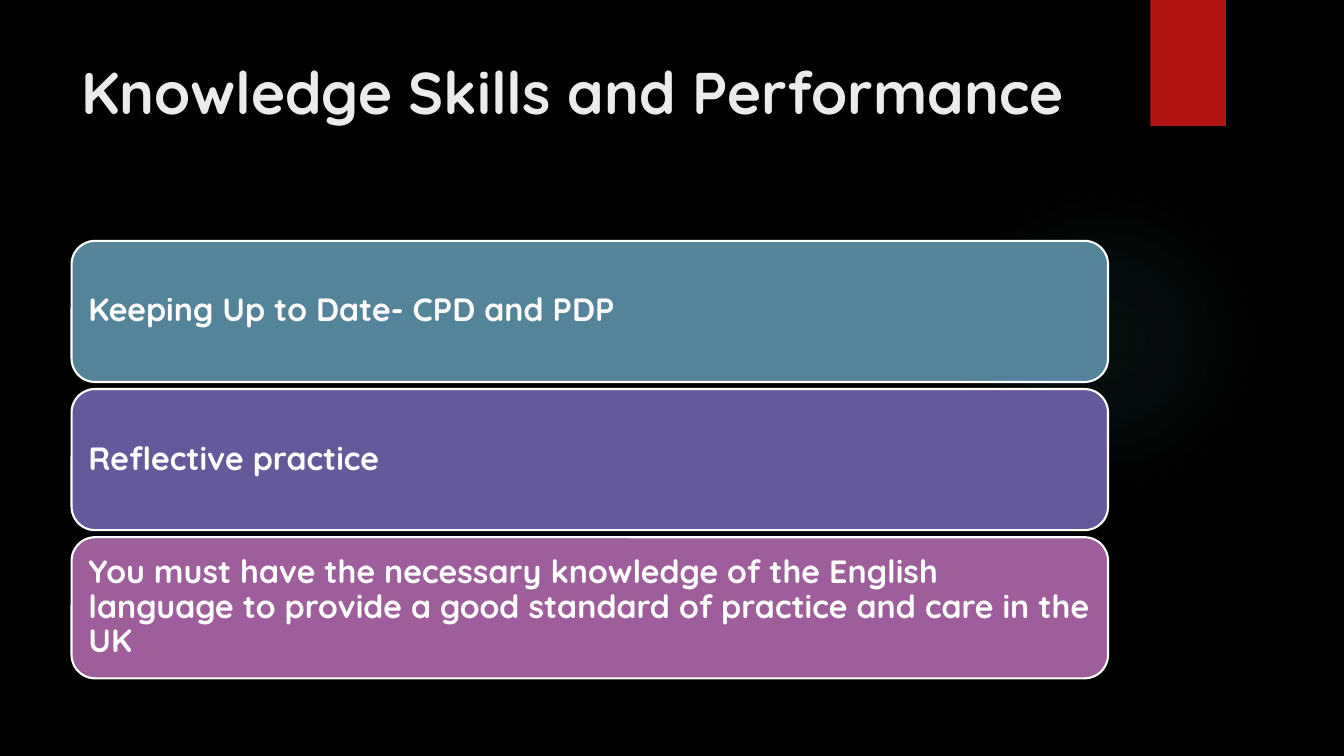
"""Build the Knowledge Skills and Performance slide."""
from dataclasses import dataclass

import lxml.etree
import pptx
import pptx.dml.color
import pptx.enum.shapes
import pptx.enum.text
import pptx.oxml.ns
import pptx.util

Inches = pptx.util.Inches
qn = pptx.oxml.ns.qn
Preset = pptx.enum.shapes.MSO_SHAPE
Anchor = pptx.enum.text.MSO_ANCHOR


@dataclass(frozen=True)
class Theme:
    """Colours, font and type sizes."""
    background: str = "000000"
    ribbon: str = "B01513"
    glow: str = "50B9C1"
    title: str = "EBEBEB"
    white: str = "FFFFFF"
    font: str = "Quicksand"
    title_size: float = 42
    bar_size: float = 23


@dataclass(frozen=True)
class Bar:
    """A rounded bar with its message."""
    text: str
    fill: str


THEME = Theme()
BARS = [
    Bar("Keeping Up to Date- CPD and PDP", "54849A"),
    Bar("Reflective practice", "65599C"),
    Bar("You must have the necessary knowledge of the English language to "
        "provide a good standard of practice and care in the UK", "9E5E9B"),
]
LEFT, BAR_TOP, BAR_WIDTH, BAR_HEIGHT, BAR_PITCH = 0.71, 2.39, 10.28, 1.4, 1.47


def rgb(value: str) -> pptx.dml.color.RGBColor:
    """Turn a hexadecimal string into a colour."""
    return pptx.dml.color.RGBColor.from_string(value)


def add_colour(parent, value: str, alpha: int) -> None:
    """Append a colour with an opacity in percent."""
    colour = lxml.etree.SubElement(parent, qn("a:srgbClr"), val=value)
    lxml.etree.SubElement(colour, qn("a:alpha"), val=str(alpha * 1000))


def write_text(shape, text: str, *, size: float, colour: str, anchor: Anchor,
               margins: tuple[float, float], line_spacing: float = 1.0) -> None:
    """Write one bold, left-aligned paragraph into a shape."""
    frame = shape.text_frame
    frame.word_wrap = True
    frame.vertical_anchor = anchor
    frame.margin_left = frame.margin_right = Inches(margins[0])
    frame.margin_top = frame.margin_bottom = Inches(margins[1])
    paragraph = frame.paragraphs[0]
    paragraph.alignment = pptx.enum.text.PP_ALIGN.LEFT
    paragraph.line_spacing = line_spacing
    run = paragraph.add_run()
    run.text = text
    run.font.name = THEME.font
    run.font.size = pptx.util.Pt(size)
    run.font.bold = True
    run.font.color.rgb = rgb(colour)


def add_block(slide, preset: Preset, left: float, top: float, width: float,
              height: float, fill: str, line: str | None = None):
    """Add a filled preset shape without a shadow."""
    shape = slide.shapes.add_shape(
        preset, Inches(left), Inches(top), Inches(width), Inches(height))
    shape.fill.solid()
    shape.fill.fore_color.rgb = rgb(fill)
    if line:
        shape.line.color.rgb = rgb(line)
        shape.line.width = pptx.util.Pt(1.5)
    else:
        shape.line.fill.background()
    shape.shadow.inherit = False
    return shape


def add_glow(slide) -> None:
    """Add the faint radial glow."""
    shape = add_block(slide, Preset.OVAL, 9.41, 1.83, 3.08, 3.08, THEME.glow)
    gradient = lxml.etree.Element(qn("a:gradFill"), rotWithShape="1")
    stops = lxml.etree.SubElement(gradient, qn("a:gsLst"))
    for position, alpha in ((0, 7), (36, 6), (69, 0)):
        stop = lxml.etree.SubElement(stops, qn("a:gs"), pos=str(position * 1000))
        add_colour(stop, THEME.glow, alpha)
    circle = lxml.etree.SubElement(gradient, qn("a:path"), path="circle")
    centre = dict.fromkeys("ltrb", "50000")
    lxml.etree.SubElement(circle, qn("a:fillToRect"), centre)
    properties = shape.element.spPr
    properties.replace(properties.find(qn("a:solidFill")), gradient)


def add_ribbon(slide) -> None:
    """Add the red ribbon with its soft shadow."""
    shape = add_block(slide, Preset.RECTANGLE, 11.41, 0, 0.75, 1.25, THEME.ribbon)
    effects = shape.element.spPr.find(qn("a:effectLst"))
    shadow = lxml.etree.SubElement(
        effects, qn("a:outerShdw"), blurRad=str(pptx.util.Pt(3)),
        dist=str(pptx.util.Pt(2)), dir=str(90 * 60000), rotWithShape="0")
    add_colour(shadow, "000000", 45)


def add_title(slide) -> None:
    """Add the slide heading."""
    box = slide.shapes.add_textbox(
        Inches(LEFT), Inches(0.5), Inches(10.29), Inches(1.53))
    write_text(box, "Knowledge Skills and Performance", size=THEME.title_size,
               colour=THEME.title, anchor=Anchor.TOP, margins=(0.1, 0.05))


def add_bars(slide) -> None:
    """Stack the message bars at an equal pitch."""
    for index, bar in enumerate(BARS):
        shape = add_block(slide, Preset.ROUNDED_RECTANGLE, LEFT,
                          BAR_TOP + index * BAR_PITCH, BAR_WIDTH, BAR_HEIGHT,
                          bar.fill, THEME.white)
        write_text(shape, bar.text, size=THEME.bar_size, colour=THEME.white,
                   anchor=Anchor.MIDDLE, margins=(0.1, 0.1), line_spacing=0.9)


def main() -> None:
    """Build and save the presentation."""
    presentation = pptx.Presentation()
    presentation.slide_width = Inches(13.33)
    presentation.slide_height = Inches(7.5)
    slide = presentation.slides.add_slide(presentation.slide_layouts[6])
    slide.background.fill.solid()
    slide.background.fill.fore_color.rgb = rgb(THEME.background)
    add_glow(slide)
    add_ribbon(slide)
    add_title(slide)
    add_bars(slide)
    presentation.save("out.pptx")


if __name__ == "__main__":
    main()
